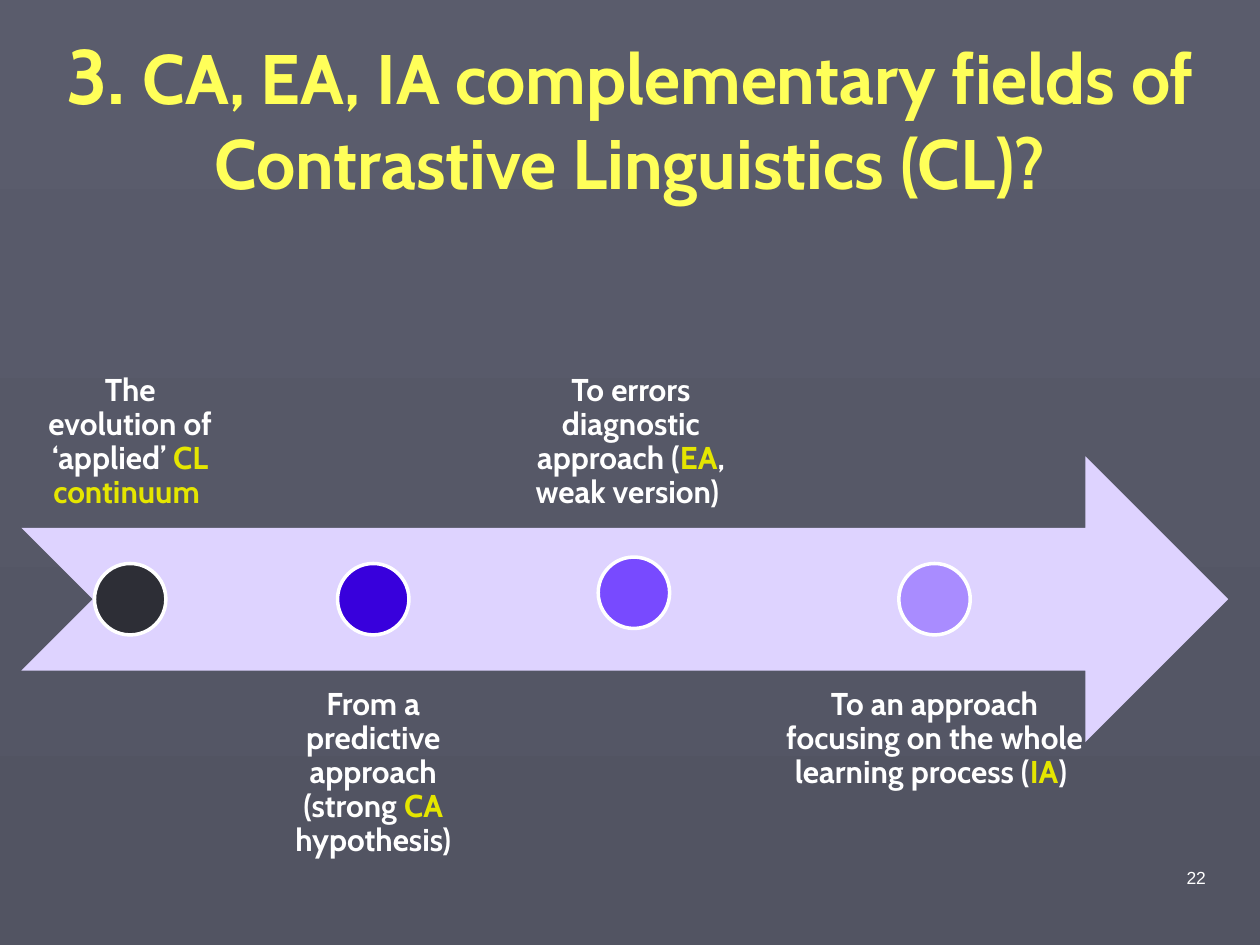
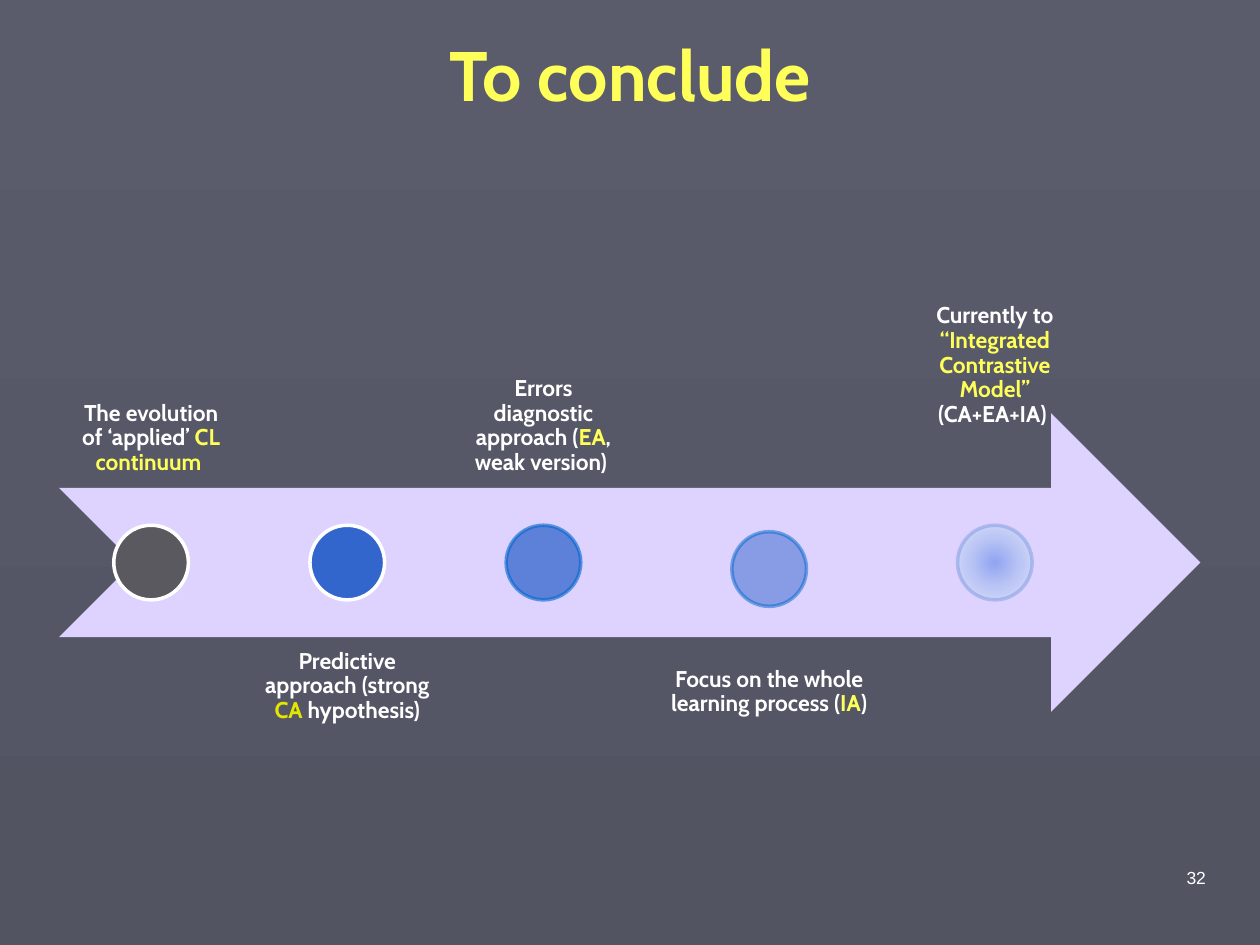
import dataclasses

import lxml.etree
import pptx
import pptx.dml.color
import pptx.enum.shapes
import pptx.enum.text
import pptx.oxml.ns
import pptx.util

Cm = pptx.util.Cm
Pt = pptx.util.Pt
qn = pptx.oxml.ns.qn
ALIGN = pptx.enum.text.PP_ALIGN
ANCHOR = pptx.enum.text.MSO_ANCHOR
SHAPE = pptx.enum.shapes.MSO_SHAPE


@dataclasses.dataclass(frozen=True)
class Theme:
    """Colours, fonts and type sizes shared by the slides."""
    width: float = 25.4
    height: float = 19.05
    bg_top: str = "5A5C6C"
    bg_bottom: str = "525462"
    yellow: str = "FFFF59"
    olive: str = "E5E600"
    white: str = "FFFFFF"
    arrow: str = "DED3FF"
    blue: str = "3366CC"
    rim: str = "0066CC"
    glow: tuple = ((0, "91A4F1"), (50, "BDC7F5"), (100, "DFE3F9"))
    font: str = "Cabin"
    number_font: str = "Arial"
    title_size: int = 40
    title_number_size: int = 44
    number_size: int = 10


T = Theme()


@dataclasses.dataclass
class Box:
    """A rectangle in centimetres."""
    x: float
    y: float
    w: float
    h: float

    def emu(self):
        """Return left, top, width and height as lengths."""
        return Cm(self.x), Cm(self.y), Cm(self.w), Cm(self.h)


@dataclasses.dataclass
class Milestone:
    """One dot on the arrow with its label."""
    runs: list
    width: float
    fill: object
    alpha: int = 100
    line: str = T.white
    line_alpha: int = 100
    label_shift: tuple = (0, 0)
    dot_shift: tuple = (0, 0)


def rgb(code):
    """Turn a hex code into a colour."""
    return pptx.dml.color.RGBColor.from_string(code)


def set_alpha(holder, percent):
    """Make the solid colour inside an element partly transparent."""
    if percent < 100:
        color = holder.find(qn("a:solidFill")).find(qn("a:srgbClr"))
        lxml.etree.SubElement(color, qn("a:alpha"), val=str(percent * 1000))


def radial_fill(sp, stops):
    """Fill a shape with a circular gradient from its centre."""
    sp.fill.gradient()
    grad = sp._element.spPr.find(qn("a:gradFill"))
    for child in list(grad):
        grad.remove(child)
    gs_list = lxml.etree.SubElement(grad, qn("a:gsLst"))
    for position, code in stops:
        gs = lxml.etree.SubElement(gs_list, qn("a:gs"), pos=str(position * 1000))
        lxml.etree.SubElement(gs, qn("a:srgbClr"), val=code)
    circle = lxml.etree.SubElement(grad, qn("a:path"))
    circle.set("path", "circle")
    edges = {side: "50000" for side in "ltrb"}
    lxml.etree.SubElement(circle, qn("a:fillToRect"), edges)


def add_text(s, box, runs, size, font=T.font, bold=True, align=ALIGN.CENTER,
             anchor=ANCHOR.TOP, inset=None, spacing=None):
    """Add a one-paragraph text box of (text, colour[, size]) runs."""
    tf = s.shapes.add_textbox(*box.emu()).text_frame
    tf.word_wrap = True
    tf.vertical_anchor = anchor
    if inset is not None:
        tf.margin_left = tf.margin_right = Cm(inset)
        tf.margin_top = tf.margin_bottom = Cm(inset)
    p = tf.paragraphs[0]
    p.alignment = align
    p.line_spacing = spacing
    p.font.name = font
    p.font.size = Pt(size)
    p.font.bold = bold
    for text, color, *run_size in runs:
        r = p.add_run()
        r.text = text
        r.font.color.rgb = rgb(color)
        if run_size:
            r.font.size = Pt(run_size[0])


def set_background(master):
    """Give every slide the same vertical gradient."""
    fill = master.background.fill
    fill.gradient()
    fill.gradient_angle = 270
    for stop, code in zip(fill.gradient_stops, (T.bg_top, T.bg_bottom)):
        stop.color.rgb = rgb(code)


def add_frame(prs, title_box, title_runs, number):
    """Add a slide with its title and page number."""
    s = prs.slides.add_slide(prs.slide_layouts[6])
    add_text(s, title_box, title_runs, T.title_size, anchor=ANCHOR.MIDDLE)
    add_text(s, Box(18.21, 17.35, 6.35, 1.32), [(str(number), T.white)],
             T.number_size, T.number_font, False, ALIGN.RIGHT)
    return s


def add_dot(s, box, stone):
    """Add the round marker of a milestone."""
    dot = s.shapes.add_shape(SHAPE.OVAL, *box.emu())
    dot.shadow.inherit = False
    if isinstance(stone.fill, tuple):
        radial_fill(dot, stone.fill)
    else:
        dot.fill.solid()
        dot.fill.fore_color.rgb = rgb(stone.fill)
        set_alpha(dot._element.spPr, stone.alpha)
    dot.line.width = Pt(2)
    dot.line.color.rgb = rgb(stone.line)
    set_alpha(dot._element.spPr.find(qn("a:ln")), stone.line_alpha)


def add_timeline(s, box, stones, size, inset, gap):
    """Draw a notched arrow with labels alternating above and below it."""
    arrow = s.shapes.add_shape(SHAPE.NOTCHED_RIGHT_ARROW, *box.emu())
    arrow.shadow.inherit = False
    arrow.fill.solid()
    arrow.fill.fore_color.rgb = rgb(T.arrow)
    arrow.line.fill.background()
    diameter = box.h / 4
    x = box.x
    for i, stone in enumerate(stones):
        above = i % 2 == 0
        dx, dy = stone.label_shift
        label_x = x + dx
        label_y = box.y + (-0.75 if above else 0.75) * box.h + dy
        label_h = min(box.h, T.height - label_y)
        add_text(s, Box(label_x, label_y, stone.width, label_h), stone.runs, size,
                 anchor=ANCHOR.BOTTOM if above else ANCHOR.TOP,
                 inset=inset, spacing=0.9)
        dx, dy = stone.dot_shift
        add_dot(s, Box(label_x + (stone.width - diameter) / 2 + dx,
                       box.y + (box.h - diameter) / 2 + dy,
                       diameter, diameter), stone)
        x += stone.width + gap


def fields_slide(prs):
    """Build the slide on the complementary fields."""
    title = [("3. ", T.yellow, T.title_number_size),
             ("CA, EA, IA complementary fields of Contrastive Linguistics (CL)?", T.yellow)]
    s = add_frame(prs, Box(0, 0.43, T.width, 3.81), title, 22)
    stones = [
        Milestone([("The evolution of ‘applied’ ", T.white), ("CL continuum ", T.olive)],
                  4.39, "2D2E36"),
        Milestone([("From a predictive approach (strong ", T.white), ("CA", T.olive),
                   (" hypothesis)", T.white)], 5.11, "3800DC"),
        Milestone([("To errors diagnostic approach (", T.white), ("EA", T.olive),
                   (", weak version) ", T.white)], 4.98, "784AFF",
                  dot_shift=(0.06, -0.13)),
        Milestone([("To an approach focusing on the whole learning process (", T.white),
                   ("IA", T.olive), (") ", T.white)], 6.96, "A98CFF"),
    ]
    add_timeline(s, Box(0.43, 9.2, 24.33, 5.76), stones, 18, 0.36, 0.15)


def conclusion_slide(prs):
    """Build the concluding slide."""
    s = add_frame(prs, Box(0, 0, T.width, 2.97), [("To conclude", T.yellow)], 32)
    stones = [
        Milestone([("The evolution of ‘applied’ ", T.white), ("CL continuum ", T.yellow)],
                  3.71, "59595F"),
        Milestone([("Predictive approach (strong ", T.white), ("CA", T.olive),
                   (" hypothesis)", T.white)], 3.84, T.blue),
        Milestone([("Errors diagnostic approach (", T.white), ("EA", T.yellow),
                   (", weak version) ", T.white)], 3.71, T.blue, 75, T.rim, 60),
        Milestone([("Focus on the whole learning process (", T.white), ("IA", T.yellow),
                   (")", T.white)], 5.03, T.blue, 50, T.rim, 50,
                  label_shift=(0, 0.36), dot_shift=(0, 0.13)),
        Milestone([("Currently to ", T.white),
                   ("“Integrated Contrastive Model’’ ", T.yellow),
                   ("(CA+EA+IA) ", T.white)], 3.53, T.glow, 100, T.blue, 25,
                  label_shift=(0.09, -0.97)),
    ]
    add_timeline(s, Box(1.19, 8.33, 23.01, 6.02), stones, 13, 0.25, 0.18)


def main():
    """Build and save the presentation."""
    prs = pptx.Presentation()
    prs.slide_width, prs.slide_height = Cm(T.width), Cm(T.height)
    set_background(prs.slide_master)
    fields_slide(prs)
    conclusion_slide(prs)
    prs.save("out.pptx")


if __name__ == "__main__":
    main()
